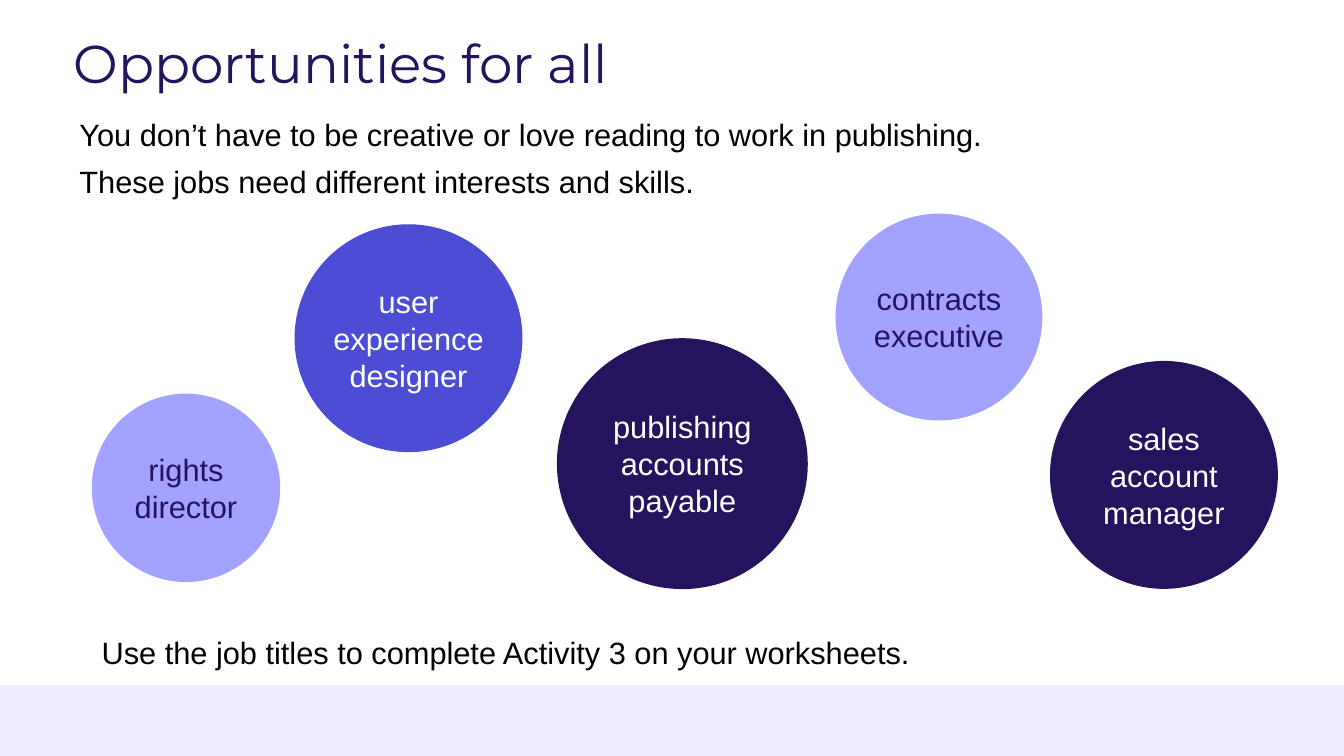
from dataclasses import dataclass

from pptx import Presentation
from pptx.dml.color import RGBColor
from pptx.enum import shapes, text
from pptx.util import Pt

COLOURS = {
    "navy": "25135E",
    "indigo": "4C4CD5",
    "lavender": "A3A3FF",
    "pale": "EDEDFF",
    "white": "FFFFFF",
    "black": "000000",
}
SLIDE_WIDTH, SLIDE_HEIGHT = 960, 540
FOOTER_HEIGHT = 50.4


@dataclass(frozen=True)
class Job:
    title: str
    left: float
    top: float
    diameter: float
    fill: str
    ink: str
    inset: float = 0


@dataclass(frozen=True)
class Passage:
    lines: tuple[str, ...]
    left: float
    top: float
    width: float
    height: float
    inset_top: float = 5
    size: float = 22
    font: str = "Arial"
    ink: str = "black"


JOBS = (
    Job("user experience designer", 210.4, 160.2, 162.8, "indigo", "white"),
    Job("rights director", 65.6, 281.2, 134.6, "lavender", "navy"),
    Job("publishing accounts payable", 397.8, 241.6, 179.2, "navy", "white", 2.88),
    Job("contracts executive", 596.8, 152.6, 147.8, "lavender", "navy"),
    Job("sales account manager", 750, 257.8, 162.8, "navy", "white"),
)

PASSAGES = (
    Passage(("Opportunities for all",), 45.4, 23, 462.2, 55.4,
            inset_top=3.6, size=38, font="Montserrat", ink="navy"),
    Passage(("You don’t have to be creative or love reading to work in publishing.",
             "These jobs need different interests and skills."),
            49.7, 80.6, 803.5, 65.5),
    Passage(("Use the job titles to complete Activity 3 on your worksheets.",),
            65.5, 450.7, 605.5, 38.2),
)


def rgb(name: str) -> RGBColor:
    return RGBColor.from_string(COLOURS[name])


def set_font(paragraph, name: str, size: float, ink: str) -> None:
    paragraph.font.name = name
    paragraph.font.size = Pt(size)
    paragraph.font.color.rgb = rgb(ink)


def add_flat_shape(slide, kind, left: float, top: float, width: float,
                   height: float, fill: str):
    """Add a preset shape with a solid fill, no outline and no shadow."""
    flat = slide.shapes.add_shape(kind, Pt(left), Pt(top), Pt(width), Pt(height))
    flat.shadow.inherit = False
    flat.fill.solid()
    flat.fill.fore_color.rgb = rgb(fill)
    flat.line.fill.background()
    return flat


def add_job(slide, job: Job) -> None:
    circle = add_flat_shape(slide, shapes.MSO_SHAPE.OVAL, job.left, job.top,
                            job.diameter, job.diameter, job.fill)
    frame = circle.text_frame
    frame.word_wrap = True
    frame.vertical_anchor = text.MSO_ANCHOR.MIDDLE
    frame.margin_left = frame.margin_right = Pt(job.inset)
    frame.margin_top = frame.margin_bottom = Pt(job.inset)
    label = frame.paragraphs[0]
    label.text = job.title
    label.alignment = text.PP_ALIGN.CENTER
    set_font(label, "Arial", 22, job.ink)


def add_passage(slide, passage: Passage) -> None:
    box = slide.shapes.add_textbox(Pt(passage.left), Pt(passage.top),
                                   Pt(passage.width), Pt(passage.height))
    frame = box.text_frame
    frame.word_wrap = True
    frame.margin_top = Pt(passage.inset_top)
    for index, line in enumerate(passage.lines):
        paragraph = frame.add_paragraph() if index else frame.paragraphs[0]
        paragraph.text = line
        paragraph.line_spacing = 0.9
        if index:
            paragraph.space_before = Pt(10)
        set_font(paragraph, passage.font, passage.size, passage.ink)


def main() -> None:
    deck = Presentation()
    deck.slide_width, deck.slide_height = Pt(SLIDE_WIDTH), Pt(SLIDE_HEIGHT)
    slide = deck.slides.add_slide(deck.slide_layouts[6])
    add_flat_shape(slide, shapes.MSO_SHAPE.RECTANGLE, 0,
                   SLIDE_HEIGHT - FOOTER_HEIGHT, SLIDE_WIDTH, FOOTER_HEIGHT, "pale")
    for job in JOBS:
        add_job(slide, job)
    for passage in PASSAGES:
        add_passage(slide, passage)
    deck.save("out.pptx")


if __name__ == "__main__":
    main()
